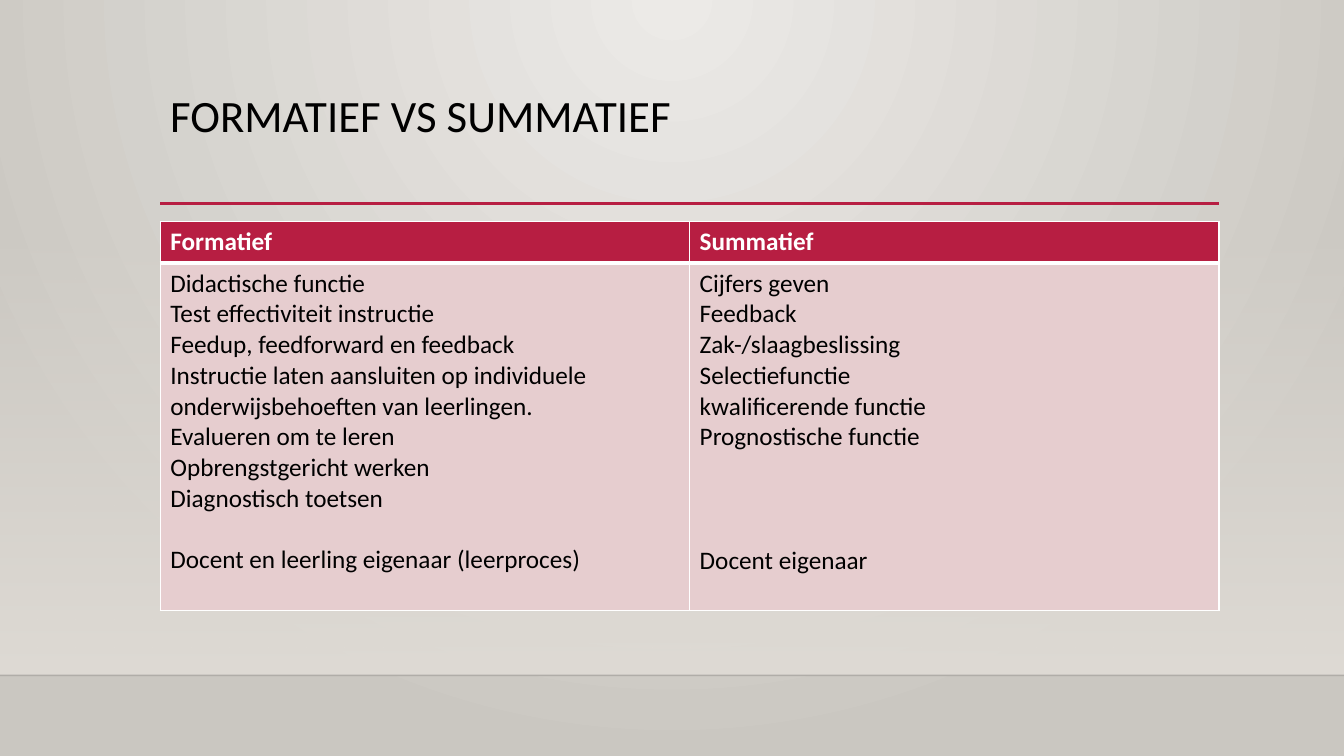
from lxml import etree
from pptx import Presentation
from pptx.dml.color import RGBColor
from pptx.enum.shapes import MSO_CONNECTOR, MSO_SHAPE
from pptx.enum.text import MSO_ANCHOR
from pptx.oxml.ns import qn
from pptx.util import Inches, Pt

STRAIGHT = MSO_CONNECTOR.STRAIGHT
RECTANGLE = MSO_SHAPE.RECTANGLE
TOP = MSO_ANCHOR.TOP

BLACK = RGBColor(0x00, 0x00, 0x00)
WHITE = RGBColor(0xFF, 0xFF, 0xFF)
CRIMSON = RGBColor(0xB7, 0x1E, 0x42)
PINK = RGBColor(0xE6, 0xCD, 0xCF)
SAND = RGBColor(0xDF, 0xDB, 0xD5)
LIGHT_STONE = RGBColor(0xEC, 0xEA, 0xE7)
DARK_STONE = RGBColor(0xCA, 0xC7, 0xC1)

FONT = "Calibri"
WIDTH, HEIGHT = 13.33, 7.5
LEFT, CONTENT_WIDTH = 1.59, 10.5
FLOOR = 6.7
HEADER_HEIGHT, BODY_HEIGHT = 0.41, 3.45
BODY_LINE = 22

COLUMNS = [
    ("Formatief",
     ["Didactische functie", "Test effectiviteit instructie",
      "Feedup, feedforward en feedback",
      "Instructie laten aansluiten op individuele onderwijsbehoeften van leerlingen.",
      "Evalueren om te leren", "Opbrengstgericht werken", "Diagnostisch toetsen"],
     "Docent en leerling eigenaar (leerproces)", 1),
    ("Summatief",
     ["Cijfers geven", "Feedback", "Zak-/slaagbeslissing", "Selectiefunctie",
      "kwalificerende functie", "Prognostische functie"],
     "Docent eigenaar", 3),
]


def set_alpha(color_element, percent):
    """Give a colour element an opacity in percent."""
    etree.SubElement(color_element, qn("a:alpha"), val=str(percent * 1000))


def set_gradient(fill, colors):
    """Fill with a two-stop gradient."""
    fill.gradient()
    for stop, color in zip(fill.gradient_stops, colors):
        stop.color.rgb = color


def add_line(slide, left, top, width, color, weight):
    """Draw a horizontal line without shadow."""
    line = slide.shapes.add_connector(
        STRAIGHT, Inches(left), Inches(top), Inches(left + width), Inches(top))
    line.line.color.rgb = color
    line.line.width = Pt(weight)
    etree.SubElement(line.element.spPr, qn("a:effectLst"))
    return line


def add_backdrop(slide, box):
    """Paint the radial background, the wall fading to sand and the floor edge."""
    set_gradient(slide.background.fill, (LIGHT_STONE, DARK_STONE))
    gradient = next(slide.element.iter(qn("a:gradFill")))
    gradient.remove(gradient.find(qn("a:lin")))
    circle = etree.SubElement(gradient, qn("a:path"), {"path": "circle"})
    etree.SubElement(circle, qn("a:fillToRect"), l="43000", t="0", r="43000", b="100000")

    left, top, width, height = box
    wall = slide.shapes.add_shape(RECTANGLE, *map(Inches, box))
    wall.shadow.inherit = False
    wall.line.fill.background()
    set_gradient(wall.fill, (SAND, SAND))
    wall.fill.gradient_angle = 270
    set_alpha(next(wall.element.spPr.iter(qn("a:srgbClr"))), 0)

    edge = add_line(slide, left, top + height, width, BLACK, 1)
    set_alpha(next(edge.element.spPr.iter(qn("a:srgbClr"))), 20)


def add_title(slide, box, text):
    """Write the title at the top of its box, with a rule below."""
    left, top, width, height = box
    add_line(slide, left, top + height, width, CRIMSON, 2.5)
    frame = slide.shapes.add_textbox(*map(Inches, box)).text_frame
    frame.word_wrap = True
    frame.vertical_anchor = TOP
    paragraph = frame.paragraphs[0]
    paragraph.text = text
    paragraph.line_spacing = 0.9
    paragraph.font.name = FONT
    paragraph.font.size = Pt(32)
    paragraph.font.color.rgb = BLACK


def set_borders(cell, weights):
    """Draw white borders given as weights for left, right, top and bottom."""
    properties = cell._tc.get_or_add_tcPr()
    for index, (side, weight) in enumerate(zip("LRTB", weights)):
        border = etree.Element(qn("a:ln" + side), w=str(Pt(weight)))
        solid = etree.SubElement(border, qn("a:solidFill"))
        etree.SubElement(solid, qn("a:srgbClr"), val=str(WHITE))
        properties.insert(index, border)


def fill_cell(cell, lines, fill, color, bold, weights):
    """Write lines into a cell and style it."""
    cell.fill.solid()
    cell.fill.fore_color.rgb = fill
    set_borders(cell, weights)
    cell.text_frame.text = "\n".join(lines)
    for paragraph in cell.text_frame.paragraphs:
        paragraph.font.name = FONT
        paragraph.font.size = Pt(18)
        paragraph.font.bold = bold
        paragraph.font.color.rgb = color


def add_comparison(slide, box, columns):
    """Place the table with one column for each kind of assessment."""
    table = slide.shapes.add_table(2, len(columns), *map(Inches, box)).table
    table.rows[0].height = Inches(HEADER_HEIGHT)
    table.rows[1].height = Inches(BODY_HEIGHT)
    for index, (heading, points, owner, gap_lines) in enumerate(columns):
        table.columns[index].width = Inches(box[2] / len(columns))
        fill_cell(table.cell(0, index), [heading], CRIMSON, WHITE, True, (1, 1, 1, 3))
        body = table.cell(1, index)
        fill_cell(body, points + [owner], PINK, BLACK, False, (1, 1, 3, 1))
        body.text_frame.paragraphs[-1].space_before = Pt(gap_lines * BODY_LINE)


def main():
    """Build the slide and save it."""
    presentation = Presentation()
    presentation.slide_width = Inches(WIDTH)
    presentation.slide_height = Inches(HEIGHT)
    slide = presentation.slides.add_slide(presentation.slide_layouts[6])
    add_backdrop(slide, (0, 2.21, WIDTH, FLOOR - 2.21))
    add_title(slide, (LEFT, 0.88, CONTENT_WIDTH, 1.14), "FORMATIEF VS SUMMATIEF")
    add_comparison(
        slide, (LEFT, 2.2, CONTENT_WIDTH, HEADER_HEIGHT + BODY_HEIGHT), COLUMNS)
    presentation.save("out.pptx")


if __name__ == "__main__":
    main()
